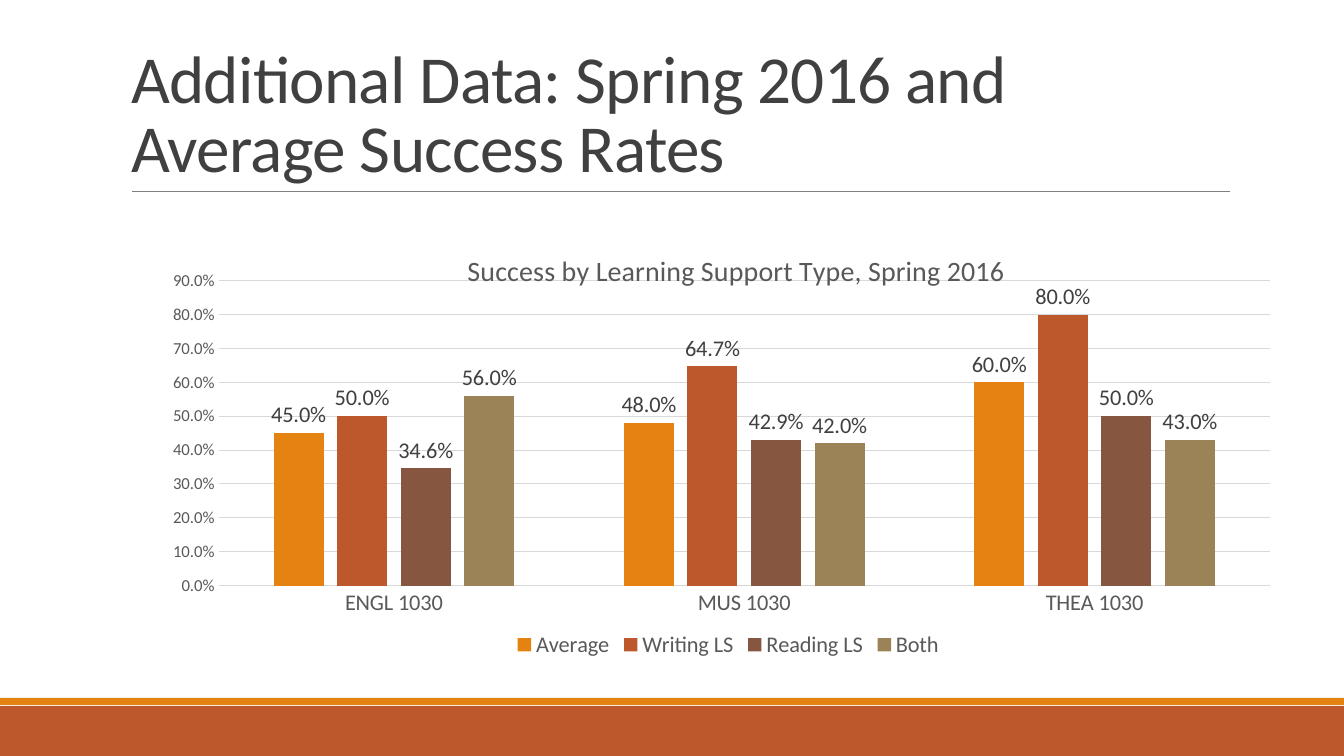
from lxml import etree
from pptx import Presentation
from pptx import util as u
from pptx.chart.data import CategoryChartData
from pptx.dml.color import RGBColor
from pptx.enum import chart as ch, shapes, text
from pptx.oxml.ns import qn

TITLE = "Additional Data: Spring 2016 and Average Success Rates"
CHART_TITLE = "Success by Learning Support Type, Spring 2016"
COURSES = ["ENGL 1030", "MUS 1030", "THEA 1030"]
SERIES = [
    ("Average", "E48312", (0.45, 0.48, 0.6)),
    ("Writing LS", "BD582C", (0.5, 0.647, 0.8)),
    ("Reading LS", "865640", (0.346, 0.429, 0.5)),
    ("Both", "9B8357", (0.56, 0.42, 0.43)),
]
BANDS = [("BD582C", 706, 50), ("E48312", 698, 7)]
W, H = 1344, 756
FONT = "Calibri"
PERCENT = "0.0%"


def px(n):
    return u.Emu(round(n * 914400 / 100.8))


def rgb(value):
    return RGBColor.from_string(value)


def style(font, size, color):
    font.name = FONT
    font.size = u.Pt(size)
    font.bold = False
    font.color.rgb = rgb(color)


def stroke(line, color, width):
    line.color.rgb = rgb(color)
    line.width = u.Pt(width)


def place(parent, index, **values):
    for old in parent.findall(qn("c:layout")):
        parent.remove(old)
    layout = etree.Element(qn("c:layout"))
    manual = etree.SubElement(layout, qn("c:manualLayout"))
    for tag, value in values.items():
        etree.SubElement(manual, qn("c:" + tag)).set("val", str(value))
    parent.insert(index, layout)


def add_bands(s):
    for color, top, height in BANDS:
        sp = s.shapes.add_shape(shapes.MSO_SHAPE.RECTANGLE, 0, px(top), px(W), px(height))
        sp.shadow.inherit = False
        sp.fill.solid()
        sp.fill.fore_color.rgb = rgb(color)
        sp.line.fill.background()


def add_rule(s):
    rule = s.shapes.add_connector(shapes.MSO_CONNECTOR.STRAIGHT, px(132), px(191), px(1230), px(191))
    stroke(rule.line, "808080", 0.5)
    etree.SubElement(rule._element.spPr, qn("a:effectLst"))


def add_title(s):
    sp = s.shapes.title
    sp.left, sp.top, sp.width, sp.height = px(121), px(31), px(1109), px(160)
    tf = sp.text_frame
    tf.word_wrap = True
    tf.auto_size = text.MSO_AUTO_SIZE.NONE
    tf.vertical_anchor = text.MSO_ANCHOR.BOTTOM
    p = tf.paragraphs[0]
    p.alignment = text.PP_ALIGN.LEFT
    p.line_spacing = 0.85
    r = p.add_run()
    r.text = TITLE
    style(r.font, 48, "404040")
    r.font._element.set("spc", "-50")


def add_success_chart(s):
    data = CategoryChartData(number_format=PERCENT)
    data.categories = COURSES
    for name, _, values in SERIES:
        data.add_series(name, values)
    chart = s.shapes.add_chart(ch.XL_CHART_TYPE.COLUMN_CLUSTERED, px(173), px(219),
                               px(1109), px(444), data).chart
    style(chart.font, 10, "000000")

    chart.has_title = True
    r = chart.chart_title.text_frame.paragraphs[0].add_run()
    r.text = CHART_TITLE
    style(r.font, 20, "595959")
    place(chart.chart_title._element, 1, xMode="edge", yMode="edge", x=0.26, y=0.06)
    place(chart._chartSpace.chart.plotArea, 0, layoutTarget="inner", xMode="edge",
          yMode="edge", x=0.04, y=0.139, w=0.949, h=0.687)

    chart.has_legend = True
    chart.legend.position = ch.XL_LEGEND_POSITION.BOTTOM
    chart.legend.include_in_layout = False
    style(chart.legend.font, 16, "595959")

    for axis, size in ((chart.category_axis, 16), (chart.value_axis, 12)):
        axis.major_tick_mark = axis.minor_tick_mark = ch.XL_TICK_MARK.NONE
        style(axis.tick_labels.font, size, "595959")
    stroke(chart.category_axis.format.line, "D9D9D9", 0.75)
    values = chart.value_axis
    values.minimum_scale, values.maximum_scale, values.major_unit = 0, 0.9, 0.1
    values.format.line.fill.background()
    values.has_major_gridlines = True
    stroke(values.major_gridlines.format.line, "D9D9D9", 0.75)
    values.tick_labels.number_format = PERCENT
    values.tick_labels.number_format_is_linked = False

    plot = chart.plots[0]
    plot.gap_width, plot.overlap, plot.vary_by_categories = 219, -27, False
    for series, (_, color, _) in zip(plot.series, SERIES):
        series.format.fill.solid()
        series.format.fill.fore_color.rgb = rgb(color)
        labels = series.data_labels
        labels.show_value = True
        labels.position = ch.XL_LABEL_POSITION.OUTSIDE_END
        labels.number_format = PERCENT
        labels.number_format_is_linked = False
        style(labels.font, 16, "404040")


def main():
    prs = Presentation()
    prs.slide_width, prs.slide_height = px(W), px(H)
    s = prs.slides.add_slide(prs.slide_layouts[5])
    add_bands(s)
    add_rule(s)
    add_title(s)
    add_success_chart(s)
    prs.save("out.pptx")


if __name__ == "__main__":
    main()
